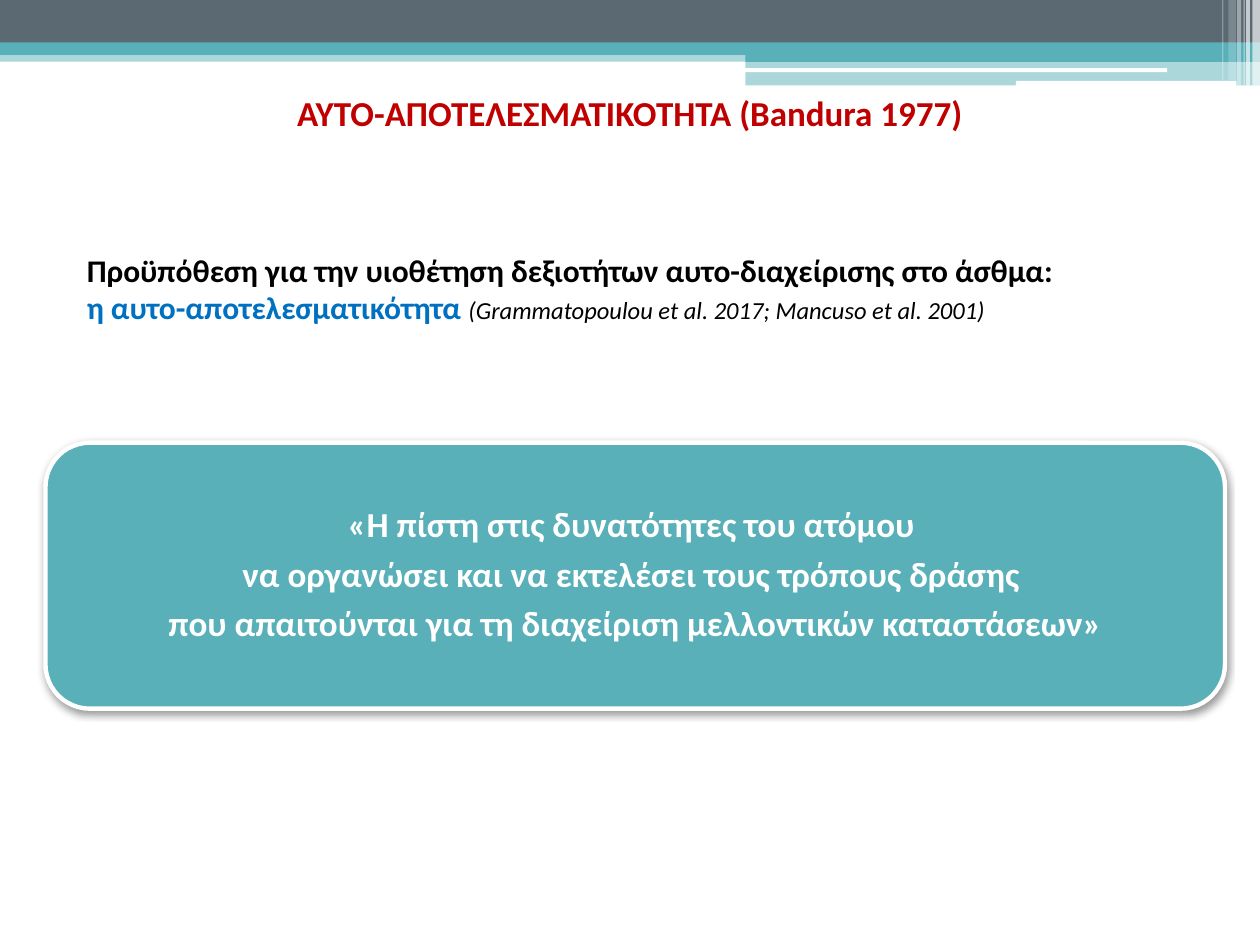
from lxml import etree
from pptx import Presentation
from pptx.dml.color import RGBColor
from pptx.enum.shapes import MSO_SHAPE
from pptx.enum.text import MSO_ANCHOR, PP_ALIGN
from pptx.oxml.ns import qn
from pptx.util import Pt

RECT = MSO_SHAPE.RECTANGLE
ROUND = MSO_SHAPE.ROUNDED_RECTANGLE
TOP, MIDDLE = MSO_ANCHOR.TOP, MSO_ANCHOR.MIDDLE
CENTER, JUSTIFY = PP_ALIGN.CENTER, PP_ALIGN.JUSTIFY

TEAL = RGBColor(0x59, 0xB0, 0xB9)
SLATE = RGBColor(0x5B, 0x69, 0x73)
WHITE = RGBColor(0xFF, 0xFF, 0xFF)
BLACK = RGBColor(0, 0, 0)
RED = RGBColor(0xC0, 0, 0)
BLUE = RGBColor(0, 0x70, 0xC0)

WIDTH, HEIGHT = 720, 540
BANDS = [
    (RECT, 0, 28.8, WIDTH, 6.5, TEAL, 50),
    (RECT, 0, 0, WIDTH, 24.5, SLATE, 100),
    (RECT, 0, 24.2, WIDTH, 7.2, TEAL, 100),
    (RECT, 426, 28.2, 294, 7.2, TEAL, 100),
    (RECT, 426, 34.6, 294, 14.2, TEAL, 50),
    (ROUND, 425.5, 39, 241.5, 2.2, WHITE, 100),
    (ROUND, 580.5, 46.2, 126, 2.9, WHITE, 100),
]
STRIPES = [
    (715.7, 4.3, 49, 65),
    (712.1, 2.2, 49, 65),
    (710.6, 0.7, 49, 60),
    (707, 2.2, 49, 40),
    (702, 4.3, 46, 20),
    (698.4, 0.7, 46, 30),
]


def add_box(slide, kind, x, y, w, h, color, alpha=100):
    box = slide.shapes.add_shape(kind, Pt(x), Pt(y), Pt(w), Pt(h))
    box.shadow.inherit = False
    box.fill.solid()
    box.fill.fore_color.rgb = color
    box.line.fill.background()
    if alpha < 100:
        tint = box._element.spPr.find(qn("a:solidFill"))[0]
        etree.SubElement(tint, qn("a:alpha"), val=str(alpha * 1000))
    return box


def add_shade(box, blur, dist, angle, alpha):
    effects = box._element.spPr.find(qn("a:effectLst"))
    shade = etree.SubElement(
        effects, qn("a:outerShdw"), blurRad=str(Pt(blur)),
        dist=str(Pt(dist)), dir=str(angle * 60000), rotWithShape="0")
    tint = etree.SubElement(shade, qn("a:srgbClr"), val=str(BLACK))
    etree.SubElement(tint, qn("a:alpha"), val=str(alpha * 1000))


def add_run(para, text, size=20, color=BLACK, bold=True, italic=False):
    run = para.add_run()
    run.text = text
    font = run.font
    font.name, font.size = "Calibri", Pt(size)
    font.bold, font.italic = bold, italic
    font.color.rgb = color


def add_text(slide, x, y, w, h, lines, align=CENTER, anchor=TOP,
             pitch=None, after=0):
    frame = slide.shapes.add_textbox(Pt(x), Pt(y), Pt(w), Pt(h)).text_frame
    frame.word_wrap = True
    frame.vertical_anchor = anchor
    for i, runs in enumerate(lines):
        para = frame.add_paragraph() if i else frame.paragraphs[0]
        para.alignment = align
        para.line_spacing = pitch
        para.space_after = Pt(after)
        for text, style in runs:
            add_run(para, text, **style)
    return frame


def add_header(slide):
    for band in BANDS:
        add_box(slide, *band)
    for x, w, h, alpha in STRIPES:
        add_box(slide, RECT, x, 0, w, h, WHITE, alpha)


def add_quote(slide):
    card = add_box(slide, ROUND, 26, 253, 674, 152, TEAL)
    card.line.color.rgb = WHITE
    card.line.width = Pt(2.5)
    add_shade(card, 4.1, 2, 90, 40)
    lines = [
        "«Η πίστη στις δυνατότητες του ατόμου ",
        "να οργανώσει και να εκτελέσει τους τρόπους δράσης ",
        "που απαιτούνται για τη διαχείριση μελλοντικών καταστάσεων»",
    ]
    add_text(slide, 33, 260.5, 660, 137,
             [[(line, {"color": WHITE})] for line in lines],
             anchor=MIDDLE, pitch=0.9, after=6.6)


def main():
    deck = Presentation()
    deck.slide_width, deck.slide_height = Pt(WIDTH), Pt(HEIGHT)
    slide = deck.slides.add_slide(deck.slide_layouts[6])
    add_header(slide)
    add_text(slide, 0, 49, WIDTH, 31.5,
             [[("ΑΥΤΟ-ΑΠΟΤΕΛΕΣΜΑΤΙΚΟΤΗΤΑ (Bandura 1977)", {"color": RED})]])
    add_quote(slide)
    add_text(slide, 42.5, 139.7, 641, 51, [
        [("Προϋπόθεση για την υιοθέτηση δεξιοτήτων αυτο-διαχείρισης "
          "στο άσθμα: ", {"size": 18})],
        [("η αυτο-αποτελεσματικότητα ", {"size": 18, "color": BLUE}),
         ("(Grammatopoulou et al. 2017; Mancuso et al. 2001)",
          {"size": 14, "bold": False, "italic": True})],
    ], align=JUSTIFY)
    deck.save("out.pptx")


if __name__ == "__main__":
    main()
